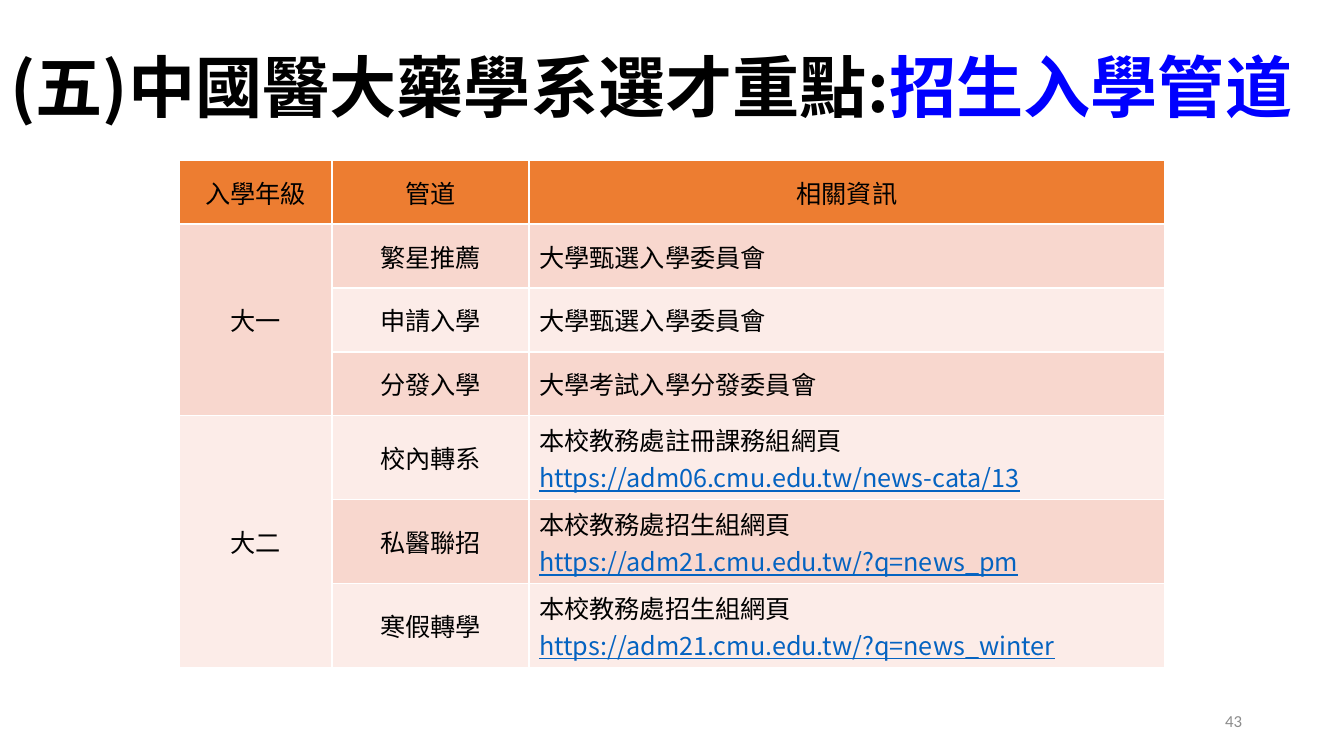
from dataclasses import dataclass
from lxml.etree import SubElement
from pptx import Presentation
from pptx.dml.color import RGBColor as Rgb
from pptx.enum.text import MSO_ANCHOR as Anchor, PP_ALIGN as Align
from pptx.oxml.ns import qn
from pptx.util import Pt

TITLE = [("(五)中國醫大藥學系選才重點:", "black"), ("招生入學管道", "blue")]
HEAD = ("入學年級", "管道", "相關資訊")
GRADES = [
    ("大一", [
        ("繁星推薦", ["大學甄選入學委員會"]),
        ("申請入學", ["大學甄選入學委員會"]),
        ("分發入學", ["大學考試入學分發委員會"]),
    ]),
    ("大二", [
        ("校內轉系", ["本校教務處註冊課務組網頁",
                  "https://adm06.cmu.edu.tw/news-cata/13"]),
        ("私醫聯招", ["本校教務處招生組網頁",
                  "https://adm21.cmu.edu.tw/?q=news_pm"]),
        ("寒假轉學", ["本校教務處招生組網頁",
                  "https://adm21.cmu.edu.tw/?q=news_winter"]),
    ]),
]
PAGE = "43"
COLS = (153, 197, 636)
LOW, TALL = 64, 84


@dataclass(frozen=True)
class Theme:
    black: str = "000000"
    blue: str = "0000FF"
    link: str = "0563C1"
    gray: str = "8C8C8C"
    white: str = "FFFFFF"
    head: str = "ED7D31"
    bands: tuple = ("FCECE8", "F8D7CE")
    cjk: str = "Noto Sans CJK SC"
    latin: str = "Calibri"
    big: int = 48
    body: int = 18
    small: int = 12


LOOK = Theme()


def px(n):
    return round(n * 914400 / 100.8)


def place(shape, *box):
    shape.left, shape.top, shape.width, shape.height = map(px, box)


def add_run(para, text, size, color, face=LOOK.cjk):
    run = para.add_run()
    run.text = text
    font = run.font
    font.size, font.name = Pt(size), face
    font.color.rgb = Rgb.from_string(color)
    SubElement(font._element, qn("a:ea"), typeface=face)
    return font


def edge(cell):
    """Draw a thin white line on all four sides, placed before the fill."""
    props = cell._tc.get_or_add_tcPr()
    for i, side in enumerate(("lnL", "lnR", "lnT", "lnB")):
        line = SubElement(props, qn("a:" + side), w=str(Pt(1)))
        fill = SubElement(line, qn("a:solidFill"))
        SubElement(fill, qn("a:srgbClr"), val=LOOK.white)
        props.insert(i, line)


def write(cell, lines, align):
    cell.vertical_anchor = Anchor.MIDDLE
    frame = cell.text_frame
    for i, text in enumerate(lines):
        para = frame.add_paragraph() if i else frame.paragraphs[0]
        para.alignment = align
        link = text.startswith("https")
        font = add_run(para, text, LOOK.body, LOOK.link if link else LOOK.black)
        if link:
            font.underline = True


def add_grid(slide):
    ways = [way for _, group in GRADES for way in group]
    tall = [LOW] + [TALL if len(info) > 1 else LOW for _, info in ways]
    table = slide.shapes.add_table(
        len(tall), len(COLS), px(179), px(160), px(sum(COLS)), px(sum(tall))).table
    for col, wide in zip(table.columns, COLS):
        col.width = px(wide)
    for r, (row, high) in enumerate(zip(table.rows, tall)):
        row.height = px(high)
        for cell in row.cells:
            cell.fill.solid()
            tint = LOOK.bands[r % 2] if r else LOOK.head
            cell.fill.fore_color.rgb = Rgb.from_string(tint)
            edge(cell)
    for c, text in enumerate(HEAD):
        write(table.cell(0, c), [text], Align.CENTER)
    for r, (way, info) in enumerate(ways, 1):
        write(table.cell(r, 1), [way], Align.CENTER)
        write(table.cell(r, 2), info, Align.LEFT)
    top = 1
    for grade, group in GRADES:
        first = table.cell(top, 0)
        first.merge(table.cell(top + len(group) - 1, 0))
        write(first, [grade], Align.CENTER)
        top += len(group)


def add_title(slide):
    title = slide.shapes.title
    place(title, 0, 46, 1344, 92)
    frame = title.text_frame
    frame.word_wrap = True
    frame.vertical_anchor = Anchor.TOP
    frame.margin_top = px(14)
    para = frame.paragraphs[0]
    para.alignment = Align.LEFT
    para.line_spacing = 0.81
    for text, color in TITLE:
        add_run(para, text, LOOK.big, getattr(LOOK, color)).bold = True


def add_page(slide):
    box = slide.shapes.add_textbox(0, 0, 0, 0)
    place(box, 950, 701, 302, 40)
    frame = box.text_frame
    frame.word_wrap = True
    frame.vertical_anchor = Anchor.MIDDLE
    para = frame.paragraphs[0]
    para.alignment = Align.RIGHT
    add_run(para, PAGE, LOOK.small, LOOK.gray, LOOK.latin)


def main():
    deck = Presentation()
    deck.slide_width, deck.slide_height = px(1344), px(756)
    slide = deck.slides.add_slide(deck.slide_layouts[5])
    add_grid(slide)
    add_page(slide)
    add_title(slide)
    deck.save("out.pptx")


if __name__ == "__main__":
    main()
